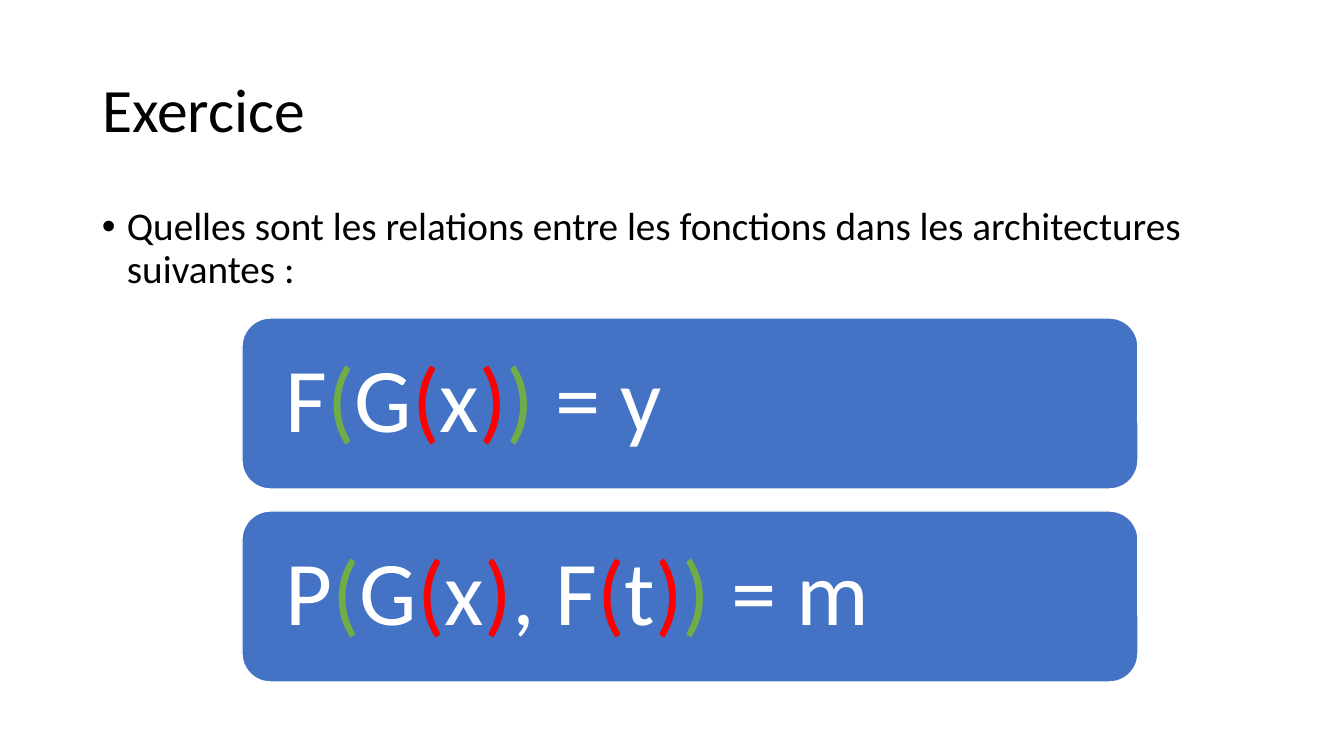
from lxml.etree import SubElement
from pptx import Presentation
from pptx.dml.color import RGBColor
from pptx.enum.shapes import MSO_SHAPE
from pptx.enum.text import MSO_ANCHOR, MSO_AUTO_SIZE, PP_ALIGN
from pptx.oxml.ns import qn
from pptx.util import Pt

TITLE = "Exercice"
QUESTION = "Quelles sont les relations entre les fonctions dans les architectures suivantes :"
BLACK, WHITE, BLUE, GREEN, RED = "000000", "FFFFFF", "4472C4", "70AD47", "FF0000"
FORMULAS = [
    [("F", WHITE), ("(", GREEN), ("G", WHITE), ("(", RED), ("x", WHITE),
     (")", RED), (") ", GREEN), ("= y", WHITE)],
    [("P", WHITE), ("(", GREEN), ("G", WHITE), ("(", RED), ("x", WHITE),
     (")", RED), (", F", WHITE), ("(", RED), ("t", WHITE), (")", RED),
     (")", GREEN), (" = m", WHITE)],
]
SLIDE_SIZE = (1344, 756)
TITLE_AREA = (92, 40, 1159, 146)
QUESTION_AREA = (92, 202, 1159, 97)
FIRST_CARD = (242, 318, 896, 171)
CARD_STEP = 193
CARD_INSET = 35
BULLET_INDENT = 25


def px(length):
    return round(length * 914400 / 100.8)


def color(value):
    return RGBColor.from_string(value)


def place(shape, area):
    shape.left, shape.top, shape.width, shape.height = map(px, area)


def format_paragraph(para, size, ink):
    para.alignment = PP_ALIGN.LEFT
    para.line_spacing = 0.9
    para.font.name = "Calibri"
    para.font.size = Pt(size)
    para.font.color.rgb = color(ink)


def add_title(page):
    title = page.shapes.title
    place(title, TITLE_AREA)
    frame = title.text_frame
    frame.text = TITLE
    frame.auto_size = MSO_AUTO_SIZE.NONE
    frame.vertical_anchor = MSO_ANCHOR.MIDDLE
    format_paragraph(frame.paragraphs[0], 44, BLACK)


def add_question(page):
    box = page.shapes.add_textbox(*map(px, QUESTION_AREA))
    frame = box.text_frame
    frame.word_wrap = True
    para = frame.paragraphs[0]
    para.text = QUESTION
    format_paragraph(para, 28, BLACK)
    para.space_before = Pt(10)
    settings = para._p.get_or_add_pPr()
    settings.set("marL", str(px(BULLET_INDENT)))
    settings.set("indent", str(-px(BULLET_INDENT)))
    SubElement(settings, qn("a:buFont")).set("typeface", "Arial")
    SubElement(settings, qn("a:buChar")).set("char", "•")
    settings.append(settings.find(qn("a:defRPr")))


def add_formula(page, index, formula):
    left, top, width, height = FIRST_CARD
    area = (left, top + index * CARD_STEP, width, height)
    card = page.shapes.add_shape(MSO_SHAPE.ROUNDED_RECTANGLE, *map(px, area))
    card.shadow.inherit = False
    card.fill.solid()
    card.fill.fore_color.rgb = color(BLUE)
    card.line.color.rgb = color(WHITE)
    card.line.width = Pt(1)
    frame = card.text_frame
    frame.word_wrap = True
    frame.vertical_anchor = MSO_ANCHOR.MIDDLE
    frame.margin_left = frame.margin_right = px(CARD_INSET)
    frame.margin_top = frame.margin_bottom = px(CARD_INSET)
    para = frame.paragraphs[0]
    format_paragraph(para, 65, WHITE)
    for text, ink in formula:
        span = para.add_run()
        span.text = text
        span.font.name = "Calibri"
        span.font.size = Pt(65)
        span.font.color.rgb = color(ink)


def main():
    """Build the exercise slide with its two formula cards."""
    deck = Presentation()
    deck.slide_width, deck.slide_height = map(px, SLIDE_SIZE)
    page = deck.slides.add_slide(deck.slide_layouts[5])
    add_title(page)
    add_question(page)
    for index, formula in enumerate(FORMULAS):
        add_formula(page, index, formula)
    deck.save("out.pptx")


if __name__ == "__main__":
    main()
